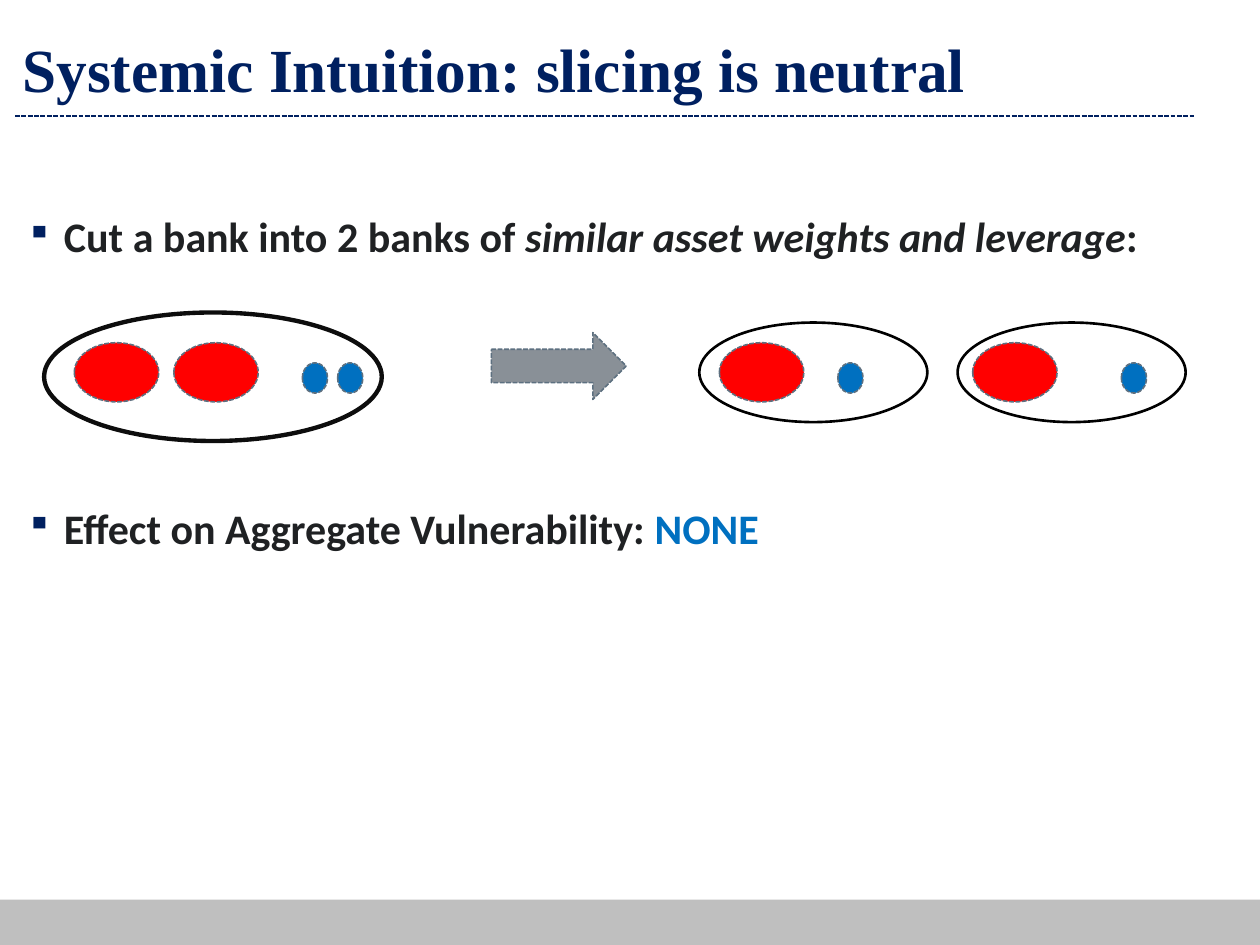
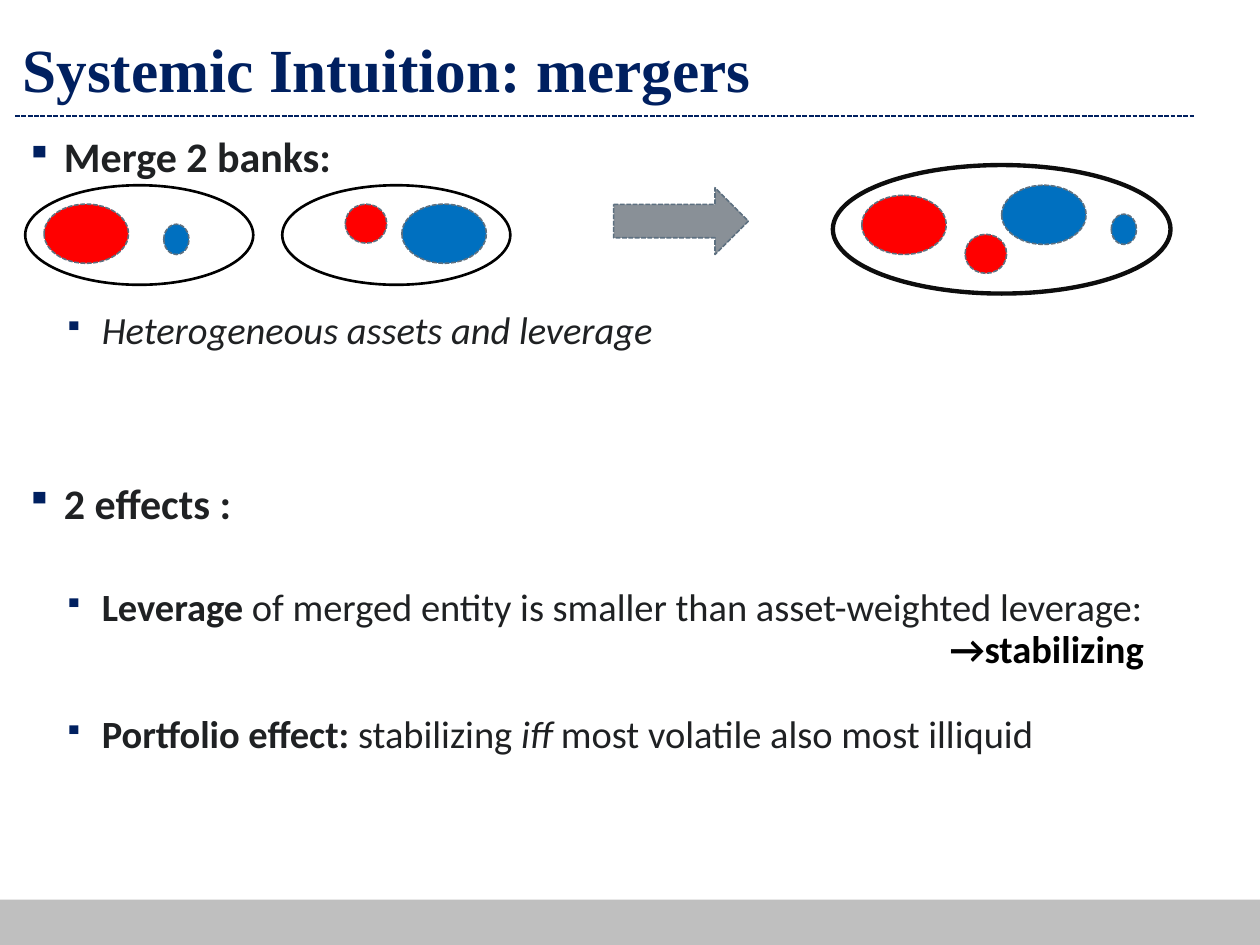
from pptx import Presentation
from pptx.dml.color import RGBColor
from pptx.enum.dml import MSO_LINE
from pptx.enum.shapes import MSO_CONNECTOR, MSO_SHAPE
from pptx.enum.text import MSO_ANCHOR, PP_ALIGN
from pptx.oxml.ns import qn
from pptx.util import Inches, Pt
from lxml.etree import SubElement

HUES = {
    "navy": "002060",
    "band": "BFBFBF",
    "text": "1F2123",
    "red": "FF0000",
    "blue": "0070C0",
    "edge": "5D7080",
    "arrow": "899097",
    "dark": "0D0D0D",
    "black": "000000",
}
BALLS = {
    "large": (0.67, 0.47),
    "mid": (0.33, 0.31),
    "small": (0.2, 0.24),
}
RINGS = {
    "whole": (2.68, 1.02, "dark", 2.5),
    "part": (1.81, 0.79, "black", 1.5),
}
LEVELS = [(24, 0.3, 85), (22, 0.6, 70)]


def hue(name):
    return RGBColor.from_string(HUES[name])


def set_line(line, color, width, dashed=False):
    line.color.rgb = hue(color)
    line.width = Pt(width)
    if dashed:
        line.dash_style = MSO_LINE.SQUARE_DOT


def add_form(slide, kind, box, fill=None):
    form = slide.shapes.add_shape(kind, *map(Inches, box))
    form.shadow.inherit = False
    if fill:
        form.fill.solid()
        form.fill.fore_color.rgb = hue(fill)
    else:
        form.fill.background()
    return form


def add_ring(slide, size, x, y):
    wide, high, color, width = RINGS[size]
    ring = add_form(slide, MSO_SHAPE.OVAL, (x, y, wide, high))
    set_line(ring.line, color, width)


def add_ball(slide, size, color, x, y):
    ball = add_form(slide, MSO_SHAPE.OVAL, (x, y, *BALLS[size]), color)
    set_line(ball.line, "edge", 0.9, True)


def add_bank(slide, size, x, y, balls):
    for ball, color, dx, dy in balls:
        add_ball(slide, ball, color, x + dx, y + dy)
    add_ring(slide, size, x, y)


def add_arrow(slide, x, y):
    arrow = add_form(slide, MSO_SHAPE.RIGHT_ARROW, (x, y, 1.07, 0.53), "arrow")
    set_line(arrow.line, "edge", 0.9, True)


def add_frame(slide, box):
    frame = slide.shapes.add_textbox(*map(Inches, box)).text_frame
    frame.word_wrap = True
    return frame


def set_font(font, name, size, color, bold=None):
    font.name = name
    font.size = Pt(size)
    font.color.rgb = hue(color)
    font.bold = bold


def add_bullet(props, size):
    tint = SubElement(props, qn("a:buClr"))
    SubElement(tint, qn("a:srgbClr"), val=HUES["navy"])
    SubElement(props, qn("a:buSzPct"), val=str(size * 1000))
    SubElement(props, qn("a:buChar"), char="▪")


def add_para(para, level, gap, runs, indent=None):
    size, left, scale = LEVELS[level]
    para.alignment = PP_ALIGN.JUSTIFY
    para.level = level
    para.space_before = Pt(gap)
    if level:
        para.line_spacing = Pt(20)
    set_font(para.font, "Calibri", size, "text")
    props = para._p.get_or_add_pPr()
    props.set("marL", str(Inches(indent or left)))
    props.set("indent", str(0 if indent else Inches(-0.3)))
    if not indent:
        add_bullet(props, scale)
    for words, style, color in runs:
        run = para.add_run()
        run.text = words
        set_font(run.font, "Calibri", size, color, "b" in style)
        run.font.italic = "i" in style


def add_body(slide, top, paras):
    frame = add_frame(slide, (0.11, top, 9.3, 5.68))
    for index, item in enumerate(paras):
        para = frame.add_paragraph() if index else frame.paragraphs[0]
        add_para(para, *item)


def add_page(deck, title):
    slide = deck.slides.add_slide(deck.slide_layouts[6])
    band = add_form(slide, MSO_SHAPE.RECTANGLE, (0, 7.14, 10, 0.39), "band")
    band.line.fill.background()
    ends = map(Inches, (0.12, 0.92, 9.49, 0.92))
    rule = slide.shapes.add_connector(MSO_CONNECTOR.STRAIGHT, *ends)
    set_line(rule.line, "navy", 0.9, True)
    SubElement(rule._element.spPr, qn("a:effectLst"))
    frame = add_frame(slide, (0.08, 0.05, 9.33, 0.83))
    frame.vertical_anchor = MSO_ANCHOR.BOTTOM
    para = frame.paragraphs[0]
    para.text = title
    set_font(para.font, "Times New Roman", 35, "navy", True)
    return slide


def add_slicing(deck):
    slide = add_page(deck, "Systemic Intuition: slicing is neutral")
    add_body(slide, 1.62, [
        (0, 0, [
            ("Cut a bank into 2 banks of", "b", "text"),
            (" similar asset weights and leverage", "bi", "text"),
            (":", "b", "text"),
        ]),
        (0, 138, [
            ("Effect on Aggregate Vulnerability: ", "b", "text"),
            ("NONE", "b", "blue"),
        ]),
    ])
    add_bank(slide, "whole", 0.35, 2.48, [
        ("large", "red", 0.24, 0.24),
        ("large", "red", 1.03, 0.24),
        ("small", "blue", 2.05, 0.4),
        ("small", "blue", 2.33, 0.4),
    ])
    for x, red, blue in [(5.55, 0.16, 1.1), (7.6, 0.12, 1.3)]:
        add_bank(slide, "part", x, 2.56, [
            ("large", "red", red, 0.16),
            ("small", "blue", blue, 0.32),
        ])
    add_arrow(slide, 3.9, 2.64)


def add_mergers(deck):
    slide = add_page(deck, "Systemic Intuition: mergers")
    add_body(slide, 0.99, [
        (0, 0, [("Merge 2 banks:", "b", "text")]),
        (1, 77.8, [("Heterogeneous assets and leverage", "i", "text")]),
        (0, 71.2, [("2 effects :", "b", "text")]),
        (1, 37.8, [
            ("Leverage", "b", "text"),
            (" of merged entity is smaller than asset-weighted leverage:",
             "", "text"),
        ]),
        (1, 4.4, [("→stabilizing", "b", "black")], 7.33),
        (1, 28.4, [
            ("Portfolio effect: ", "b", "text"),
            ("stabilizing ", "", "text"),
            ("iff", "i", "text"),
            (" most volatile also most illiquid", "", "text"),
        ]),
    ])
    add_bank(slide, "part", 0.2, 1.47, [
        ("large", "red", 0.15, 0.15),
        ("small", "blue", 1.1, 0.31),
    ])
    add_bank(slide, "part", 2.24, 1.47, [
        ("mid", "red", 0.5, 0.15),
        ("large", "blue", 0.95, 0.15),
    ])
    add_bank(slide, "whole", 6.61, 1.31, [
        ("large", "red", 0.23, 0.24),
        ("small", "blue", 2.21, 0.39),
        ("mid", "red", 1.05, 0.55),
        ("large", "blue", 1.34, 0.16),
    ])
    add_arrow(slide, 4.87, 1.49)


def main():
    deck = Presentation()
    deck.slide_width = Inches(10)
    deck.slide_height = Inches(7.5)
    add_slicing(deck)
    add_mergers(deck)
    deck.save("out.pptx")


if __name__ == "__main__":
    main()
